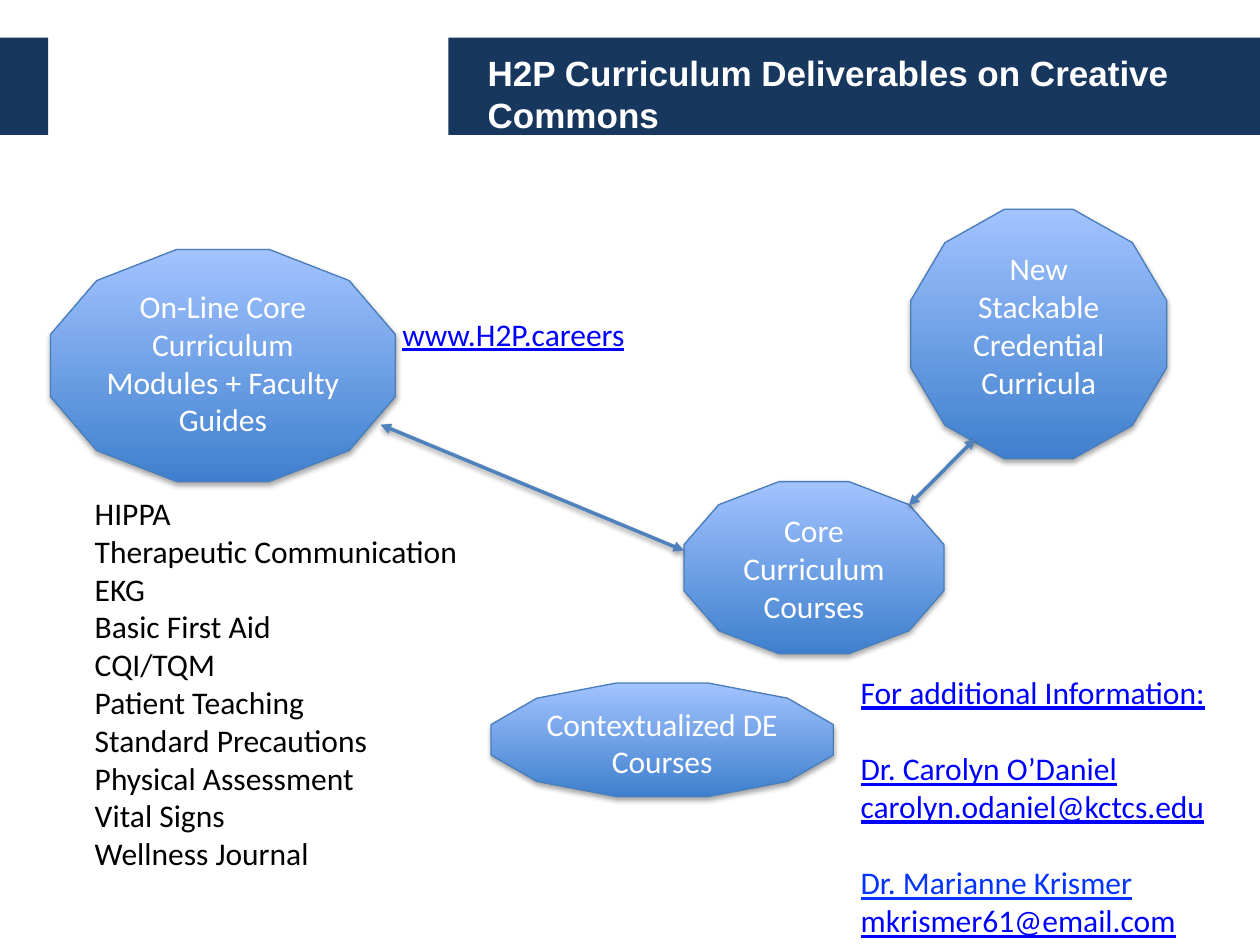
from dataclasses import dataclass

from lxml import etree
from pptx import Presentation
from pptx.dml.color import RGBColor
from pptx.enum.shapes import MSO_CONNECTOR, MSO_SHAPE
from pptx.enum.text import MSO_ANCHOR, MSO_AUTO_SIZE, PP_ALIGN
from pptx.oxml.ns import qn
from pptx.util import Cm, Pt

RECTANGLE, DODECAGON = MSO_SHAPE.RECTANGLE, MSO_SHAPE.DODECAGON
STRAIGHT = MSO_CONNECTOR.STRAIGHT
LEFT, CENTER = PP_ALIGN.LEFT, PP_ALIGN.CENTER
TOP, MIDDLE = MSO_ANCHOR.TOP, MSO_ANCHOR.MIDDLE
FIXED = MSO_AUTO_SIZE.NONE


@dataclass(frozen=True)
class Theme:
    navy: str = "17375E"
    white: str = "FFFFFF"
    black: str = "000000"
    link: str = "0000FF"
    bright_link: str = "0433FF"
    node_bottom: str = "3F80CE"
    node_top: str = "A2C3FF"
    node_edge: str = "4A7EBB"
    arrow: str = "4F81BD"
    title_font: str = "Arial"
    body_font: str = "Calibri"
    title_size: int = 20
    body_size: int = 18


@dataclass(frozen=True)
class Area:
    left: float
    top: float
    width: float
    height: float

    def lengths(self) -> list:
        return [Cm(value) for value in (self.left, self.top, self.width, self.height)]


@dataclass(frozen=True)
class Line:
    text: str
    color: str
    before: int = 0
    underline: bool = False


@dataclass(frozen=True)
class Node:
    text: str
    area: Area


@dataclass(frozen=True)
class Arrow:
    start: tuple[float, float]
    end: tuple[float, float]


THEME = Theme()
GAP = 22

BARS = [Area(9.04, 0.76, 16.36, 1.96), Area(0, 0.76, 0.97, 1.96)]
TITLE = Line("H2P Curriculum Deliverables on Creative Commons", THEME.white)
NODES = [
    Node("Core Curriculum Courses", Area(13.79, 9.71, 5.24, 3.47)),
    Node("New Stackable Credential Curricula", Area(18.36, 4.22, 5.16, 5.03)),
    Node("Contextualized DE Courses", Area(9.9, 13.77, 6.9, 2.29)),
    Node("On-Line Core Curriculum Modules + Faculty Guides", Area(1.02, 5.03, 6.95, 4.68)),
]
ARROWS = [Arrow((7.67, 8.56), (13.79, 11.1)), Arrow((18.32, 10.19), (19.66, 8.84))]
TOPICS = [
    "HIPPA", "Therapeutic Communication", "EKG", "Basic First Aid", "CQI/TQM",
    "Patient Teaching", "Standard Precautions", "Physical Assessment",
    "Vital Signs", "Wellness Journal",
]
WEBSITE = Line("www.H2P.careers", THEME.link, underline=True)
CONTACTS = [
    Line("For additional Information:", THEME.link, 0, True),
    Line("Dr. Carolyn O’Daniel", THEME.link, GAP, True),
    Line("carolyn.odaniel@kctcs.edu", THEME.link, 0, True),
    Line("Dr. Marianne Krismer", THEME.bright_link, GAP, True),
    Line("mkrismer61@email.com", THEME.link, 0, True),
]


def rgb(color: str) -> RGBColor:
    return RGBColor.from_string(color)


def apply(target, values: dict) -> None:
    for name, value in values.items():
        setattr(target, name, value)


def place(shape, area: Area) -> None:
    apply(shape, dict(zip(("left", "top", "width", "height"), area.lengths())))


def write(shape, lines: list[Line], align=LEFT, anchor=TOP, inset: float = 0.13,
          font: str = THEME.body_font, size: int = THEME.body_size, bold: bool = False) -> None:
    frame = shape.text_frame
    apply(frame, {
        "word_wrap": True, "auto_size": FIXED, "vertical_anchor": anchor,
        "margin_left": Cm(inset), "margin_right": Cm(inset),
        "margin_top": Cm(0.13), "margin_bottom": Cm(0.13),
    })
    for index, line in enumerate(lines):
        para = frame.add_paragraph() if index else frame.paragraphs[0]
        apply(para, {"alignment": align, "space_before": Pt(line.before)})
        span = para.add_run()
        span.text = line.text
        apply(span.font, {"name": font, "size": Pt(size), "bold": bold,
                          "underline": line.underline})
        span.font.color.rgb = rgb(line.color)


def add_shadow(shape, distance: float, opacity: int) -> None:
    """Add a soft shadow straight below; the outline must be set first."""
    effects = etree.SubElement(shape._element.spPr, qn("a:effectLst"))
    shadow = etree.SubElement(effects, qn("a:outerShdw"), blurRad=str(Pt(3)),
                              dist=str(Pt(distance)), dir="5400000", rotWithShape="0")
    color = etree.SubElement(shadow, qn("a:srgbClr"), val=THEME.black)
    etree.SubElement(color, qn("a:alpha"), val=str(opacity * 1000))


def add_bar(page, area: Area) -> None:
    """Add a header bar behind the title."""
    bar = page.shapes.add_shape(RECTANGLE, *area.lengths())
    bar.shadow.inherit = False
    bar.fill.solid()
    bar.fill.fore_color.rgb = rgb(THEME.navy)
    bar.line.fill.background()
    page.shapes.title._element.addprevious(bar._element)


def add_node(page, node: Node) -> None:
    shape = page.shapes.add_shape(DODECAGON, *node.area.lengths())
    shape.fill.gradient()
    shape.fill.gradient_angle = 90
    for stop, color in zip(shape.fill.gradient_stops, (THEME.node_bottom, THEME.node_top)):
        stop.color.rgb = rgb(color)
    shape.line.color.rgb = rgb(THEME.node_edge)
    shape.line.width = Pt(0.75)
    add_shadow(shape, 1.8, 35)
    write(shape, [Line(node.text, THEME.white)], align=CENTER)


def add_arrow(page, arrow: Arrow) -> None:
    ends = [Cm(value) for value in (*arrow.start, *arrow.end)]
    connector = page.shapes.add_connector(STRAIGHT, *ends)
    connector.line.color.rgb = rgb(THEME.arrow)
    connector.line.width = Pt(2)
    outline = connector._element.spPr.find(qn("a:ln"))
    for tag in ("a:headEnd", "a:tailEnd"):
        etree.SubElement(outline, qn(tag), type="triangle")
    add_shadow(connector, 1.6, 38)


def add_text(page, area: Area, lines: list[Line]) -> None:
    write(page.shapes.add_textbox(*area.lengths()), lines)


def fill_topics(body) -> None:
    place(body, Area(1.78, 9.83, 8.53, 8.41))
    write(body, [Line(topic, THEME.black) for topic in TOPICS])
    for para in body.text_frame.paragraphs:
        properties = para._p.get_or_add_pPr()
        properties.set("marL", "0")
        properties.set("indent", "0")
        etree.SubElement(properties, qn("a:buNone"))


def main() -> None:
    deck = Presentation()
    apply(deck, {"slide_width": Cm(25.4), "slide_height": Cm(19.05)})
    page = deck.slides.add_slide(deck.slide_layouts[1])
    title, body = page.shapes.title, page.placeholders[1]
    for area in BARS:
        add_bar(page, area)
    place(title, Area(9.58, 0.3, 14.55, 3.17))
    write(title, [TITLE], anchor=MIDDLE, inset=0.25, font=THEME.title_font,
          size=THEME.title_size, bold=True)
    fill_topics(body)
    for node in NODES:
        add_node(page, node)
    add_text(page, Area(7.98, 6.22, 5.38, 0.99), [WEBSITE])
    for arrow in ARROWS:
        add_arrow(page, arrow)
    add_text(page, Area(17.22, 13.44, 8.18, 5.44), CONTACTS)
    deck.save("out.pptx")


if __name__ == "__main__":
    main()
